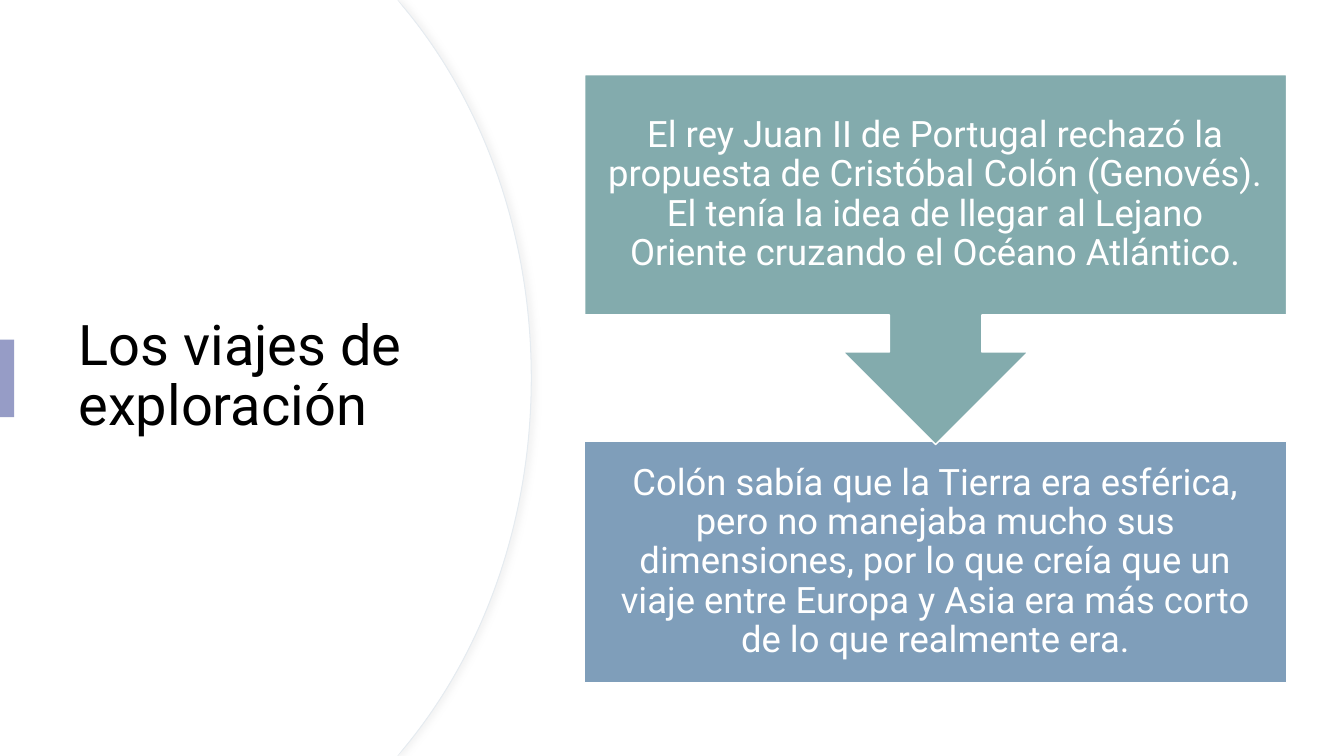
import dataclasses

import pptx
import pptx.dml.color
import pptx.enum.shapes
import pptx.enum.text
import pptx.oxml
import pptx.oxml.ns
import pptx.util

Inches = pptx.util.Inches
Pt = pptx.util.Pt
RGB = pptx.dml.color.RGBColor.from_string
Shape = pptx.enum.shapes.MSO_SHAPE
Align = pptx.enum.text.PP_ALIGN
NS = pptx.oxml.ns.nsdecls("a")
qn = pptx.oxml.ns.qn


@dataclasses.dataclass(frozen=True)
class Theme:
    font: str = "Roboto"
    title_size: int = 40
    body_size: int = 26
    title: str = "000000"
    white: str = "FFFFFF"
    panel_edge: str = "E5EBF0"
    shadow: str = "D9D9D9"
    accent: str = "969CC6"
    teal: str = "83ABAD"
    blue: str = "7F9EBA"


theme = Theme()


def paint(shape, fill, line=None, width=1):
    shape.shadow.inherit = False
    shape.fill.solid()
    shape.fill.fore_color.rgb = RGB(fill)
    if line:
        shape.line.color.rgb = RGB(line)
        shape.line.width = Pt(width)
    else:
        shape.line.fill.background()


def write(shape, text, size, color, align):
    frame = shape.text_frame
    frame.word_wrap = True
    frame.auto_size = pptx.enum.text.MSO_AUTO_SIZE.NONE
    frame.vertical_anchor = pptx.enum.text.MSO_ANCHOR.MIDDLE
    frame.text = text
    paragraph = frame.paragraphs[0]
    paragraph.alignment = align
    paragraph.line_spacing = 0.9
    paragraph.font.name = theme.font
    paragraph.font.size = Pt(size)
    paragraph.font.color.rgb = RGB(color)


deck = pptx.Presentation()
deck.slide_width = Inches(13.33)
deck.slide_height = Inches(7.5)
slide = deck.slides.add_slide(deck.slide_layouts[5])

# Curved panel on the left: an edge with a soft shadow, and a face over it.
# Coordinates are in hundredths of an inch.
for right, edge in ((527, theme.panel_edge), (526, None)):
    shoulder, bulge = right - 126, right - 48
    builder = slide.shapes.build_freeform(0, 0, scale=Inches(0.01))
    builder.add_line_segments(
        [(394, 0), (shoulder, 8), (right, 375), (shoulder, 742), (394, 750), (0, 750)],
        close=True)
    panel = builder.convert_to_shape()
    paint(panel, theme.white, edge, 0.75)

    # Bend the two long sides into curves
    sides = panel.element.findall(".//" + qn("a:lnTo"))
    bends = (
        ((bulge, 102), (right, 232), (right, 375)),
        ((right, 518), (bulge, 648), (shoulder, 742)),
    )
    for side, bend in zip(sides[2:4], bends):
        points = "".join(f'<a:pt x="{x}" y="{y}"/>' for x, y in bend)
        curve = pptx.oxml.parse_xml(f"<a:cubicBezTo {NS}>{points}</a:cubicBezTo>")
        side.getparent().replace(side, curve)

    if edge:
        effects = panel.element.spPr.find(qn("a:effectLst"))
        effects.append(pptx.oxml.parse_xml(
            f'<a:outerShdw {NS} blurRad="{Pt(4)}" dist="{Pt(3)}" dir="0">'
            f'<a:srgbClr val="{theme.shadow}"><a:alpha val="30000"/></a:srgbClr></a:outerShdw>'))

# Title, brought in front of the panel
title = slide.shapes.title
title.left, title.top = Inches(0.68), Inches(1.27)
title.width, title.height = Inches(3.94), Inches(4.95)
write(title, "Los viajes de exploración", theme.title_size, theme.title, Align.LEFT)
title.element.getparent().append(title.element)

# Accent bar at the slide edge
accent = slide.shapes.add_shape(
    Shape.RECTANGLE, Inches(0), Inches(3.37), Inches(0.14), Inches(0.77))
paint(accent, theme.accent)

# Two steps of the story, the first pointing down to the second
steps = (
    (Shape.RECTANGLE, 4.38, 2.39, theme.blue,
     "Colón sabía que la Tierra era esférica, pero no manejaba mucho sus dimensiones, "
     "por lo que creía que un viaje entre Europa y Asia era más corto de lo que realmente era."),
    (Shape.DOWN_ARROW_CALLOUT, 0.74, 3.67, theme.teal,
     "El rey Juan II de Portugal rechazó la propuesta de Cristóbal Colón (Genovés). "
     "El tenía la idea de llegar al Lejano Oriente cruzando el Océano Atlántico."),
)
for kind, top, height, color, text in steps:
    story = slide.shapes.add_shape(
        kind, Inches(5.8), Inches(top), Inches(6.96), Inches(height))
    paint(story, color, theme.white)
    frame = story.text_frame
    frame.margin_left = frame.margin_right = Inches(0.2)
    frame.margin_top = frame.margin_bottom = Inches(0.2)
    write(story, text, theme.body_size, theme.white, Align.CENTER)

deck.save("out.pptx")
